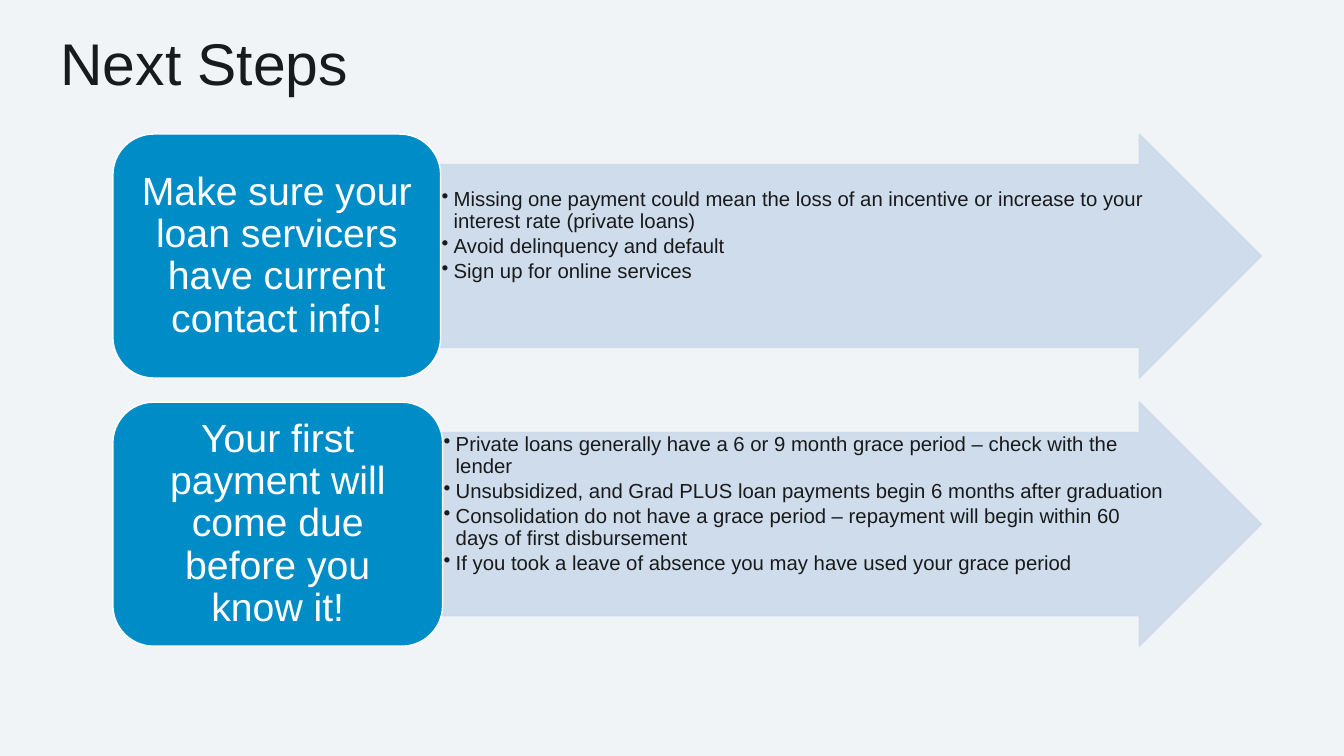
"""Build the Next Steps slide: two headline boxes, each leading into an arrow of details."""
import lxml.etree
import pptx
import pptx.dml.color
import pptx.enum.shapes
import pptx.enum.text
import pptx.oxml.ns
import pptx.util

Inches, Pt = pptx.util.Inches, pptx.util.Pt
SHAPES = pptx.enum.shapes.MSO_SHAPE
ANCHOR, ALIGN = pptx.enum.text.MSO_ANCHOR, pptx.enum.text.PP_ALIGN
qn = pptx.oxml.ns.qn

TITLE = "Next Steps"
STEPS = [
    {
        "headline": "Make sure your loan servicers have current contact info!",
        "details": [
            "Missing one payment could mean the loss of an incentive or increase to your interest rate (private loans)",
            "Avoid delinquency and default",
            "Sign up for online services",
        ],
        "headline_width": 3.25,
        "details_top_inset": 0.24,
    },
    {
        "headline": "Your first payment will come due before you know it!",
        "details": [
            "Private loans generally have a 6 or 9 month grace period – check with the lender",
            "Unsubsidized, and Grad PLUS loan payments begin 6 months after graduation",
            "Consolidation do not have a grace period – repayment will begin within 60 days of first disbursement",
            "If you took a leave of absence you may have used your grace period",
        ],
        "headline_width": 3.27,
        "details_top_inset": 0.01,
    },
]

THEME = {
    "font": "Arial",
    "background": "F1F4F7", "ink": "181A1C", "headline": "008CC6", "white": "FFFFFF", "arrow": "CCDAEA",
    "title_size": 42, "headline_size": 28, "details_size": 14.5,
    "arrow_opacity": 90,
}
LEFT, RIGHT, TOP = 1.12, 12.51, 1.33
STEP_HEIGHT, STEP_PITCH = 2.42, 2.66
BULLET_INDENT = 0.12


def rgb(name):
    return pptx.dml.color.RGBColor.from_string(THEME[name])


def add_run(paragraph, text, size, color):
    run = paragraph.add_run()
    run.text = text
    run.font.name = THEME["font"]
    run.font.size = Pt(THEME[size])
    run.font.color.rgb = rgb(color)


def add_panel(slide, preset, left, top, width, fill, outline, insets, anchor):
    panel = slide.shapes.add_shape(preset, Inches(left), Inches(top), Inches(width), Inches(STEP_HEIGHT))
    panel.shadow.inherit = False
    panel.fill.solid()
    panel.fill.fore_color.rgb = rgb(fill)
    panel.line.color.rgb = rgb(outline)
    panel.line.width = Pt(1)
    frame = panel.text_frame
    frame.word_wrap = True
    frame.vertical_anchor = anchor
    frame.margin_left, frame.margin_top, frame.margin_right, frame.margin_bottom = map(Inches, insets)
    return panel


def add_headline(slide, step, top):
    box = add_panel(slide, SHAPES.ROUNDED_RECTANGLE, LEFT, top, step["headline_width"],
                    "headline", "white", (0.12, 0.06, 0.12, 0.06), ANCHOR.MIDDLE)
    paragraph = box.text_frame.paragraphs[0]
    paragraph.alignment = ALIGN.CENTER
    paragraph.line_spacing = 0.9
    add_run(paragraph, step["headline"], "headline_size", "white")


def add_details(slide, step, top):
    left = LEFT + step["headline_width"]
    insets = (0.01, step["details_top_inset"], 0.01, 0.01)
    arrow = add_panel(slide, SHAPES.RIGHT_ARROW, left, top, RIGHT - left, "arrow", "arrow", insets, ANCHOR.TOP)
    arrow.adjustments[0], arrow.adjustments[1] = 0.75, 0.5
    for color in arrow.element.spPr.iter(qn("a:srgbClr")):
        lxml.etree.SubElement(color, qn("a:alpha"), val=str(THEME["arrow_opacity"] * 1000))
    frame = arrow.text_frame
    for index, detail in enumerate(step["details"]):
        paragraph = frame.add_paragraph() if index else frame.paragraphs[0]
        paragraph.alignment = ALIGN.LEFT
        paragraph.line_spacing = 0.9
        paragraph.space_after = Pt(2.2)
        properties = paragraph._p.get_or_add_pPr()
        properties.set("marL", str(Inches(BULLET_INDENT)))
        properties.set("indent", str(-Inches(BULLET_INDENT)))
        lxml.etree.SubElement(properties, qn("a:buChar"), char="•")
        add_run(paragraph, detail, "details_size", "ink")


def add_title(slide):
    title = slide.shapes.title
    title.left, title.top, title.width, title.height = map(Inches, (0.5, 0.3, 9, 0.62))
    frame = title.text_frame
    frame.word_wrap = True
    frame.auto_size = pptx.enum.text.MSO_AUTO_SIZE.NONE
    frame.vertical_anchor = ANCHOR.MIDDLE
    frame.paragraphs[0].alignment = ALIGN.LEFT
    add_run(frame.paragraphs[0], TITLE, "title_size", "ink")


def main():
    deck = pptx.Presentation()
    deck.slide_width, deck.slide_height = Inches(13.33), Inches(7.5)
    slide = deck.slides.add_slide(deck.slide_layouts.get_by_name("Title Only"))
    slide.background.fill.solid()
    slide.background.fill.fore_color.rgb = rgb("background")
    add_title(slide)
    for row, step in enumerate(STEPS):
        top = TOP + row * STEP_PITCH
        add_details(slide, step, top)
        add_headline(slide, step, top)
    deck.save("out.pptx")


if __name__ == "__main__":
    main()
